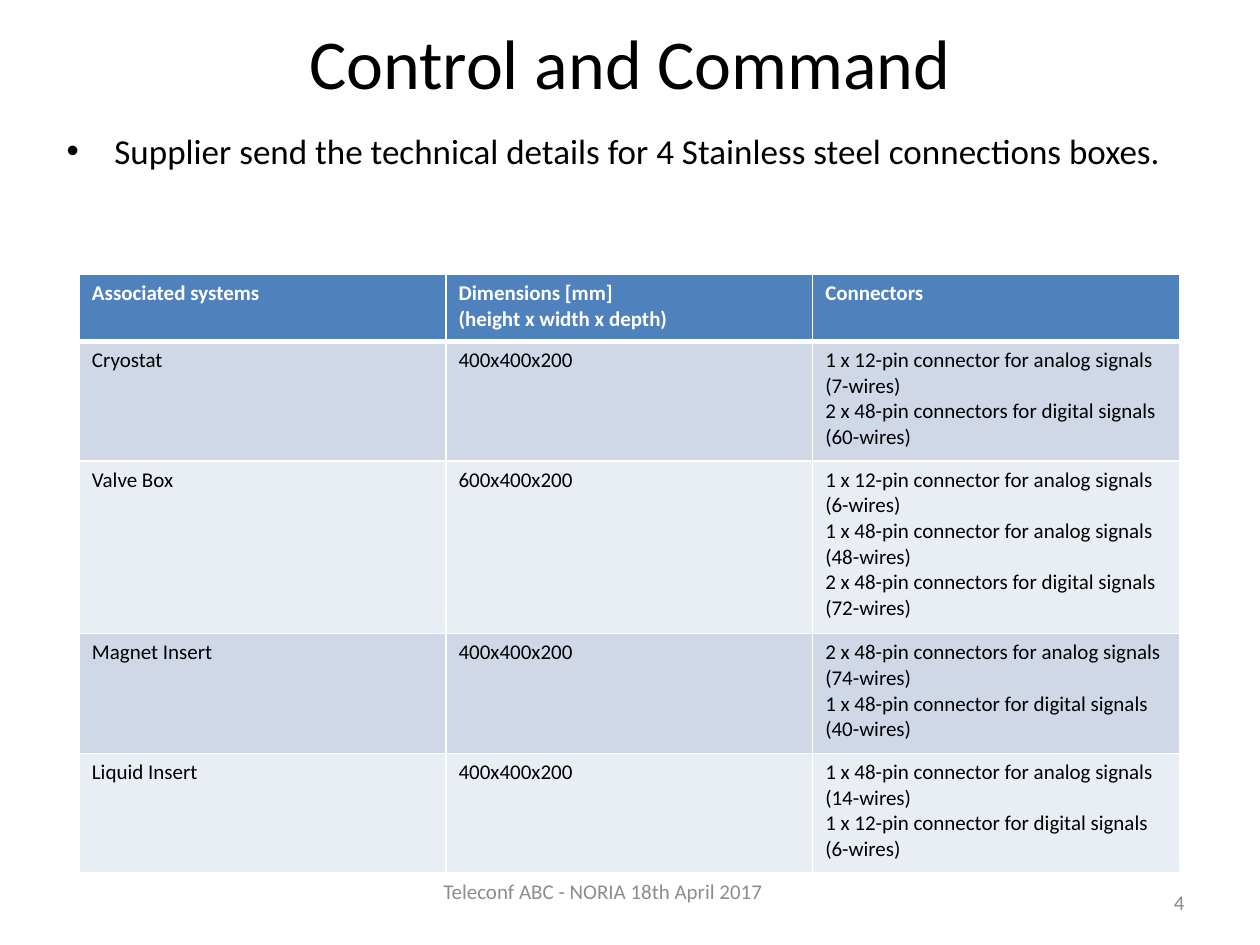
from pptx import Presentation
from pptx.dml.color import RGBColor as Rgb
from pptx.enum.text import MSO_ANCHOR as Anchor, PP_ALIGN as Align
from pptx.oxml.xmlchemy import OxmlElement as Element
from pptx.util import Inches, Pt

WIDTH, HEIGHT = 10, 7.5
FONT = "Calibri"
COLORS = {
    "ink": "000000",
    "muted": "8C8C8C",
    "white": "FFFFFF",
    "header": "4F81BD",
    "odd": "D0D8E8",
    "even": "E9EDF4",
}
HEADINGS = ["Associated systems", "Dimensions [mm]\n(height x width x depth)", "Connectors"]
SYSTEMS = [
    ("Cryostat", "400x400x200", [(1, 12, "analog", 7), (2, 48, "digital", 60)]),
    ("Valve Box", "600x400x200", [(1, 12, "analog", 6), (1, 48, "analog", 48), (2, 48, "digital", 72)]),
    ("Magnet Insert", "400x400x200", [(2, 48, "analog", 74), (1, 48, "digital", 40)]),
    ("Liquid Insert", "400x400x200", [(1, 48, "analog", 14), (1, 12, "digital", 6)]),
]


def add_span(para, text, size, color, bold=False):
    span = para.add_run()
    span.text = text
    span.font.name = FONT
    span.font.size = Pt(size)
    span.font.bold = bold
    span.font.color.rgb = Rgb.from_string(COLORS[color])


def add_text(page, place, text, size, color="ink", align=Align.LEFT, anchor=Anchor.MIDDLE):
    left, top, width, height = place
    box = page.shapes.add_textbox(Inches(left * WIDTH), Inches(top * HEIGHT),
                                  Inches(width * WIDTH), Inches(height * HEIGHT))
    frame = box.text_frame
    frame.word_wrap = True
    frame.vertical_anchor = anchor
    para = frame.paragraphs[0]
    para.alignment = align
    add_span(para, text, size, color)
    return box


def add_bullet(para, indent):
    properties = para._p.get_or_add_pPr()
    properties.set("marL", str(Inches(indent)))
    properties.set("indent", str(-Inches(indent)))
    font = Element("a:buFont")
    font.set("typeface", "Arial")
    mark = Element("a:buChar")
    mark.set("char", "•")
    properties.extend([font, mark])


def add_borders(cell, bottom):
    properties = cell._tc.get_or_add_tcPr()
    widths = {"a:lnL": 1, "a:lnR": 1, "a:lnT": 1, "a:lnB": bottom}
    for position, (tag, width) in enumerate(widths.items()):
        line = Element(tag)
        line.set("w", str(Pt(width)))
        fill = Element("a:solidFill")
        color = Element("a:srgbClr")
        color.set("val", COLORS["white"])
        fill.append(color)
        line.append(fill)
        properties.insert(position, line)


def fill_cell(cell, text, fill, color, heading):
    for index, line in enumerate(text.split("\n")):
        frame = cell.text_frame
        para = frame.add_paragraph() if index else frame.paragraphs[0]
        add_span(para, line, 12, color, heading)
    cell.fill.solid()
    cell.fill.fore_color.rgb = Rgb.from_string(COLORS[fill])
    add_borders(cell, 3 if heading else 1)


def describe(count, pins, signal, wires):
    plural = "s" if count > 1 else ""
    return f"{count} x {pins}-pin connector{plural} for {signal} signals ({wires}-wires)"


def add_systems_table(page):
    rows = [HEADINGS]
    line_counts = [2]
    for name, size, connectors in SYSTEMS:
        rows.append([name, size, "\n".join(describe(*item) for item in connectors)])
        line_counts.append(2 * len(connectors))
    heights = [Inches(0.11 + 0.21 * count) for count in line_counts]
    column = Inches(2.91)
    table = page.shapes.add_table(len(rows), len(HEADINGS), Inches(0.63), Inches(2.18),
                                  column * len(HEADINGS), sum(heights)).table
    for table_column in table.columns:
        table_column.width = column
    for row, (texts, height) in enumerate(zip(rows, heights)):
        table.rows[row].height = height
        heading = row == 0
        fill = "header" if heading else ("odd" if row % 2 else "even")
        for col, text in enumerate(texts):
            fill_cell(table.cell(row, col), text, fill, "white" if heading else "ink", heading)


def main():
    deck = Presentation()
    deck.slide_width, deck.slide_height = Inches(WIDTH), Inches(HEIGHT)
    page = deck.slides.add_slide(deck.slide_layouts[6])
    add_text(page, (0.05, 0, 0.9, 0.13), "Control and Command", 40, align=Align.CENTER)
    body = add_text(page, (0.04, 0.13, 0.9, 0.77),
                    "Supplier send the technical details for 4 Stainless steel connections boxes.",
                    20, anchor=Anchor.TOP)
    body.left = Inches(0.43)
    para = body.text_frame.paragraphs[0]
    para.space_before = Pt(4)
    add_bullet(para, 0.38)
    footer = add_text(page, (0.34, 0.93, 0.32, 0.05), "Teleconf ABC - NORIA 18th April 2017",
                      12, "muted", anchor=Anchor.TOP)
    footer.left = Inches(3.42)
    footer.text_frame.margin_top = 0
    add_text(page, (0.72, 0.93, 0.23, 0.05), "4", 12, "muted", Align.RIGHT)
    add_systems_table(page)
    deck.save("out.pptx")


if __name__ == "__main__":
    main()
